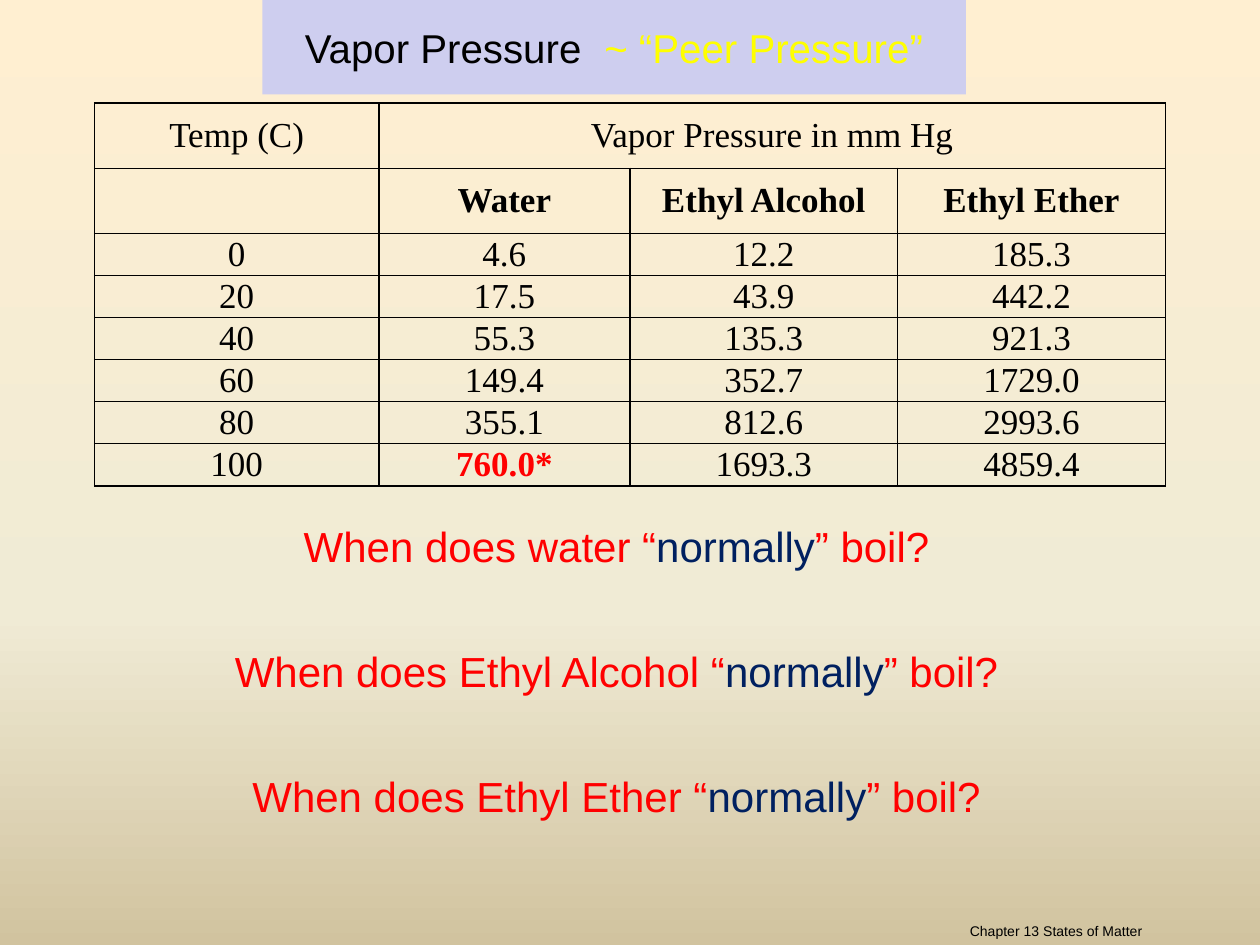
import copy

import pptx
import pptx.dml.color
import pptx.enum.shapes
import pptx.enum.text
import pptx.oxml
import pptx.oxml.ns
import pptx.util

Pt = pptx.util.Pt
ALIGN = pptx.enum.text.PP_ALIGN
ANCHOR = pptx.enum.text.MSO_ANCHOR

COLORS = {
    "black": "000000", "red": "FF0000", "navy": "002060", "yellow": "FFFF00",
    "banner": "CECEEF", "sky": "FFEFD1", "sand": "F0EBD5", "earth": "D1C39F",
}
HEADINGS = ["", "Water", "Ethyl Alcohol", "Ethyl Ether"]
PRESSURES = [
    ["0", "4.6", "12.2", "185.3"],
    ["20", "17.5", "43.9", "442.2"],
    ["40", "55.3", "135.3", "921.3"],
    ["60", "149.4", "352.7", "1729.0"],
    ["80", "355.1", "812.6", "2993.6"],
    ["100", "760.0*", "1693.3", "4859.4"],
]


def rgb(name):
    return pptx.dml.color.RGBColor.from_string(COLORS[name])


def write(p, text, size=24, font="Arial", color="black", bold=False, align=ALIGN.CENTER):
    """Append one formatted run to a paragraph."""
    p.alignment = align
    r = p.add_run()
    r.text = text
    r.font.size, r.font.name, r.font.bold = Pt(size), font, bold
    r.font.color.rgb = rgb(color)


def set_background(slide):
    fill = slide.background.fill
    fill.gradient()
    fill.gradient_angle = 270
    stops = next(slide._element.iter(pptx.oxml.ns.qn("a:gsLst")))
    stops.append(copy.deepcopy(stops[-1]))
    shades = [(0, "sky"), (0.65, "sand"), (1, "earth")]
    for stop, (position, color) in zip(fill.gradient_stops, shades):
        stop.position = position
        stop.color.rgb = rgb(color)


def add_text_box(slide, x, y, w, h, anchor=ANCHOR.TOP):
    tf = slide.shapes.add_textbox(Pt(x), Pt(y), Pt(w), Pt(h)).text_frame
    tf.word_wrap = True
    tf.vertical_anchor = anchor
    return tf


def add_title(slide, x, y, w, h):
    sp = slide.shapes.add_shape(pptx.enum.shapes.MSO_SHAPE.RECTANGLE, Pt(x), Pt(y), Pt(w), Pt(h))
    sp.shadow.inherit = False
    sp.fill.solid()
    sp.fill.fore_color.rgb = rgb("banner")
    sp.line.fill.background()
    tf = sp.text_frame
    tf.vertical_anchor = ANCHOR.MIDDLE
    write(tf.paragraphs[0], "Vapor Pressure  ", size=23)
    write(tf.paragraphs[0], "~ “Peer Pressure”", size=23, color="yellow")


def format_cell(cell):
    """Clear the fill, set the margins and draw a thin border on all sides."""
    cell.fill.background()
    cell.vertical_anchor = ANCHOR.MIDDLE
    cell.margin_left = cell.margin_right = Pt(5)
    cell.margin_top = cell.margin_bottom = Pt(0)
    tcPr = cell._tc.get_or_add_tcPr()
    for i, side in enumerate("LRTB"):
        tcPr.insert(i, pptx.oxml.parse_xml(
            f'<a:ln{side} {pptx.oxml.ns.nsdecls("a")} w="{Pt(1)}"><a:solidFill>'
            f'<a:srgbClr val="{COLORS["black"]}"/></a:solidFill></a:ln{side}>'))


def add_pressure_table(slide, x, y, col_widths, header_height, row_height):
    rows = [["Temp (C)", "Vapor Pressure in mm Hg", "", ""], HEADINGS] + PRESSURES
    heights = [header_height] * 2 + [row_height] * len(PRESSURES)
    table = slide.shapes.add_table(len(rows), len(col_widths), Pt(x), Pt(y),
                                   Pt(sum(col_widths)), Pt(sum(heights))).table
    table.first_row = table.horz_banding = False
    for column, width in zip(table.columns, col_widths):
        column.width = Pt(width)
    for row, height in zip(table.rows, heights):
        row.height = Pt(height)
    for i, texts in enumerate(rows):
        for j, text in enumerate(texts):
            cell = table.cell(i, j)
            format_cell(cell)
            if text:
                boiling = text.endswith("*")
                write(cell.text_frame.paragraphs[0], text, size=20, font="Times New Roman",
                      bold=i == 1 or boiling, color="red" if boiling else "black")
    table.cell(0, 1).merge(table.cell(0, 3))


def add_questions(slide, x, y, w, h):
    tf = add_text_box(slide, x, y, w, h)
    tf.margin_right = Pt(20.5)
    for i, liquid in enumerate(["water", "Ethyl Alcohol", "Ethyl Ether"]):
        p = tf.add_paragraph() if i else tf.paragraphs[0]
        if i:
            p.space_before = Pt(42.5)
        write(p, f"When does {liquid} “", color="red")
        write(p, "normally", color="navy")
        write(p, "” boil?", color="red")


def add_footer(slide, x, y, w, h):
    tf = add_text_box(slide, x, y, w, h, anchor=ANCHOR.BOTTOM)
    write(tf.paragraphs[0], "Chapter 13 States of Matter", size=8, align=ALIGN.RIGHT)


def main():
    prs = pptx.Presentation()
    prs.slide_width, prs.slide_height = Pt(720), Pt(540)
    slide = prs.slides.add_slide(prs.slide_layouts[6])
    set_background(slide)
    add_questions(slide, 8, 294, 702, 212)
    add_footer(slide, 324, 516, 336, 24)
    add_title(slide, 150, 0, 402, 54)
    add_pressure_table(slide, 54, 59, [162.5, 143.5, 153, 153], 37.2, 22.2)
    prs.save("out.pptx")


if __name__ == "__main__":
    main()
